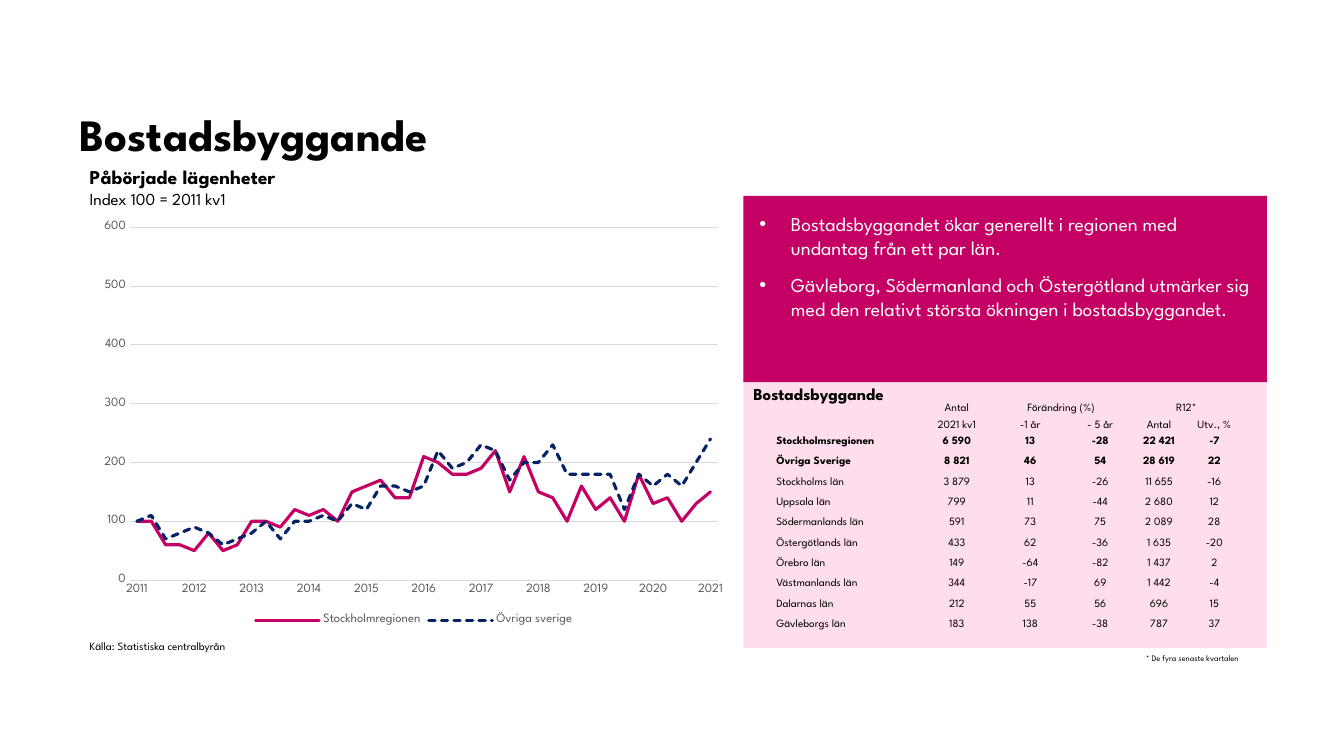
from lxml.etree import SubElement
from pptx import Presentation
from pptx.chart.data import CategoryChartData
from pptx.dml.color import RGBColor
from pptx.enum.chart import XL_CHART_TYPE, XL_LEGEND_POSITION, XL_TICK_MARK
from pptx.enum.dml import MSO_LINE
from pptx.enum.shapes import MSO_SHAPE
from pptx.enum.text import MSO_ANCHOR, PP_ALIGN
from pptx.oxml.ns import qn
from pptx.util import Pt

FONT = "League Spartan"
COLORS = {"black": "000000", "white": "FFFFFF", "magenta": "C40064", "pink": "FEDEED",
          "navy": "052364", "label": "595959", "grid": "D9D9D9"}
NO_TABLE_STYLE = "{2D5ABB26-0587-4C30-8999-92F81FD0307C}"

BULLETS = [
    "Bostadsbyggandet ökar generellt i regionen med undantag från ett par län.",
    "Gävleborg, Södermanland och Östergötland utmärker sig med den relativt "
    "största ökningen i bostadsbyggandet.",
]
HEADER_ROWS = 2
BOLD_ROWS = (2, 3)
COLUMN_WIDTHS = [111, 49, 56, 44, 40, 39]
TABLE_ROWS = [
    ["", "Antal", "Förändring (%)", "", "R12*", ""],
    ["", "2021 kv1", "-1 år", "- 5 år", "Antal", "Utv., %"],
    ["Stockholmsregionen", "6 590", "13", "-28", "22 421", "-7"],
    ["Övriga Sverige", "8 821", "46", "54", "28 619", "22"],
    ["Stockholms län", "3 879", "13", "-26", "11 655", "-16"],
    ["Uppsala län", "799", "11", "-44", "2 680", "12"],
    ["Södermanlands län", "591", "73", "75", "2 089", "28"],
    ["Östergötlands län", "433", "62", "-36", "1 635", "-20"],
    ["Örebro län", "149", "-64", "-82", "1 437", "2"],
    ["Västmanlands län", "344", "-17", "69", "1 442", "-4"],
    ["Dalarnas län", "212", "55", "56", "696", "15"],
    ["Gävleborgs län", "183", "138", "-38", "787", "37"],
]
QUARTERS = ["" if i % 4 else str(2011 + i // 4) for i in range(41)]
STOCKHOLM = [100, 100, 60, 60, 50, 80, 50, 60, 100, 100, 90, 120, 110, 120,
             100, 150, 160, 170, 140, 140, 210, 200, 180, 180, 190, 220, 150, 210,
             150, 140, 100, 160, 120, 140, 100, 180, 130, 140, 100, 130, 150]
REST_OF_SWEDEN = [100, 110, 70, 80, 90, 80, 60, 70, 80, 100, 70, 100, 100, 110,
                  100, 130, 120, 160, 160, 150, 160, 220, 190, 200, 230, 220, 170, 200,
                  200, 230, 180, 180, 180, 180, 120, 180, 160, 180, 160, 200, 240]


def rgb(name):
    return RGBColor.from_string(COLORS[name])


def style_font(font, size, color="black", bold=False):
    font.name = FONT
    font.size = Pt(size)
    font.bold = bold
    font.color.rgb = rgb(color)


def set_margins(target, left, top, right, bottom):
    target.margin_left, target.margin_top = Pt(left), Pt(top)
    target.margin_right, target.margin_bottom = Pt(right), Pt(bottom)


def add_title(s, text):
    sp = s.shapes.title
    sp.left, sp.top, sp.width, sp.height = Pt(57), Pt(26.5), Pt(664), Pt(88)
    tf = sp.text_frame
    tf.text = text
    tf.vertical_anchor = MSO_ANCHOR.BOTTOM
    set_margins(tf, 0, 0, 0, 0)
    p = tf.paragraphs[0]
    p.alignment = PP_ALIGN.LEFT
    style_font(p.runs[0].font, 32, bold=True)


def add_text(s, left, top, width, height, lines):
    """Add a text box; each line is (text, size, bold)."""
    tf = s.shapes.add_textbox(Pt(left), Pt(top), Pt(width), Pt(height)).text_frame
    tf.word_wrap = True
    tf.text = "\n".join(text for text, _, _ in lines)
    for p, (_, size, bold) in zip(tf.paragraphs, lines):
        style_font(p.runs[0].font, size, bold=bold)


def add_panel(s, left, top, width, height, color):
    sp = s.shapes.add_shape(MSO_SHAPE.RECTANGLE, Pt(left), Pt(top), Pt(width), Pt(height))
    sp.shadow.inherit = False
    sp.fill.solid()
    sp.fill.fore_color.rgb = rgb(color)
    sp.line.fill.background()
    return sp


def fill_bullets(sp, texts):
    tf = sp.text_frame
    tf.word_wrap = True
    tf.vertical_anchor = MSO_ANCHOR.TOP
    set_margins(tf, 11.5, 11.5, 11.5, 11.5)
    tf.text = "\n".join(texts)
    for i, p in enumerate(tf.paragraphs):
        p.alignment = PP_ALIGN.LEFT
        p.space_before = Pt(10 if i else 0)
        pPr = p._p.get_or_add_pPr()
        pPr.set("marL", str(Pt(22.5)))
        pPr.set("indent", str(-Pt(22.5)))
        SubElement(pPr, qn("a:buFont")).set("typeface", "Arial")
        SubElement(pPr, qn("a:buChar")).set("char", "•")
        style_font(p.runs[0].font, 14, "white")


def fill_cell(cell, text, row, col):
    cell.fill.background()
    cell.vertical_anchor = MSO_ANCHOR.BOTTOM if row < HEADER_ROWS else MSO_ANCHOR.MIDDLE
    set_margins(cell, 0.5 if col else 6.5, 0.5, 0.5, 0)
    p = cell.text_frame.paragraphs[0]
    p.alignment = PP_ALIGN.CENTER if col else PP_ALIGN.LEFT
    if text:
        r = p.add_run()
        r.text = text
        style_font(r.font, 8, bold=row in BOLD_ROWS)
    else:
        SubElement(p._p, qn("a:endParaRPr")).set("sz", "800")


def add_county_table(s):
    frame = s.shapes.add_table(len(TABLE_ROWS), len(COLUMN_WIDTHS),
                               Pt(548), Pt(283), Pt(sum(COLUMN_WIDTHS)), Pt(170.5))
    table = frame.table
    table.first_row = table.horz_banding = False
    table._tbl.tblPr.find(qn("a:tableStyleId")).text = NO_TABLE_STYLE
    for column, width in zip(table.columns, COLUMN_WIDTHS):
        column.width = Pt(width)
    for i, texts in enumerate(TABLE_ROWS):
        table.rows[i].height = Pt(12.5 if i < HEADER_ROWS else 14.55)
        for j, text in enumerate(texts):
            fill_cell(table.cell(i, j), text, i, j)
    for first in (2, 4):
        table.cell(0, first).merge(table.cell(0, first + 1))


def set_plot_layout(chart, **fractions):
    """Place the inner plot area by fractions of the chart's size."""
    plot_area = chart._chartSpace.chart.plotArea
    layout = plot_area.find(qn("c:layout"))
    if layout is None:
        layout = SubElement(plot_area, qn("c:layout"))
        plot_area.insert(0, layout)
    manual = SubElement(layout, qn("c:manualLayout"))
    settings = {"layoutTarget": "inner", "xMode": "edge", "yMode": "edge", **fractions}
    for tag, value in settings.items():
        SubElement(manual, qn(f"c:{tag}")).set("val", str(value))


def style_axis(axis):
    axis.major_tick_mark = axis.minor_tick_mark = XL_TICK_MARK.NONE
    style_font(axis.tick_labels.font, 9, "label")


def style_grid_line(line):
    line.color.rgb = rgb("grid")
    line.width = Pt(0.75)


def add_index_chart(s):
    data = CategoryChartData()
    data.categories = QUARTERS
    data.add_series("Stockholmregionen", STOCKHOLM)
    data.add_series("Övriga sverige", REST_OF_SWEDEN)
    chart = s.shapes.add_chart(XL_CHART_TYPE.LINE, Pt(65), Pt(153.5),
                               Pt(461.5), Pt(296.5), data).chart
    style_font(chart.font, 10)
    chart.has_title = False
    chart.has_legend = True
    chart.legend.position = XL_LEGEND_POSITION.BOTTOM
    chart.legend.include_in_layout = False
    style_font(chart.legend.font, 9, "label")
    set_plot_layout(chart, x=0.06, y=0.03, w=0.91, h=0.85)

    years, index = chart.category_axis, chart.value_axis
    style_axis(years)
    style_grid_line(years.format.line)
    style_axis(index)
    index.minimum_scale, index.maximum_scale, index.major_unit = 0, 600, 100
    index.format.line.fill.background()
    style_grid_line(index.major_gridlines.format.line)

    chart.plots[0].vary_by_categories = False
    for series, color in zip(chart.plots[0].series, ("magenta", "navy")):
        series.smooth = False
        line = series.format.line
        line.color.rgb = rgb(color)
        line.width = Pt(2.25)
        series._element.spPr.find(qn("a:ln")).set("cap", "rnd")
    line.dash_style = MSO_LINE.SQUARE_DOT


def main():
    prs = Presentation()
    prs.slide_width, prs.slide_height = Pt(960), Pt(540)
    s = prs.slides.add_slide(prs.slide_layouts[5])
    add_title(s, "Bostadsbyggande")
    add_text(s, 57, 453.5, 130, 17, [("Källa: Statistiska centralbyrån", 8, False)])
    add_panel(s, 531, 270.5, 374, 192.5, "pink")
    fill_bullets(add_panel(s, 531, 140, 374, 133, "magenta"), BULLETS)
    add_text(s, 531, 270.5, 122, 22, [("Bostadsbyggande", 12, True)])
    add_text(s, 811.5, 463, 93, 14, [("* De fyra senaste kvartalen", 6, False)])
    add_text(s, 57, 114.5, 330, 39, [("Påbörjade lägenheter", 14, True),
                                     ("Index 100 = 2011 kv1", 12, False)])
    add_county_table(s)
    add_index_chart(s)
    prs.save("out.pptx")


if __name__ == "__main__":
    main()
